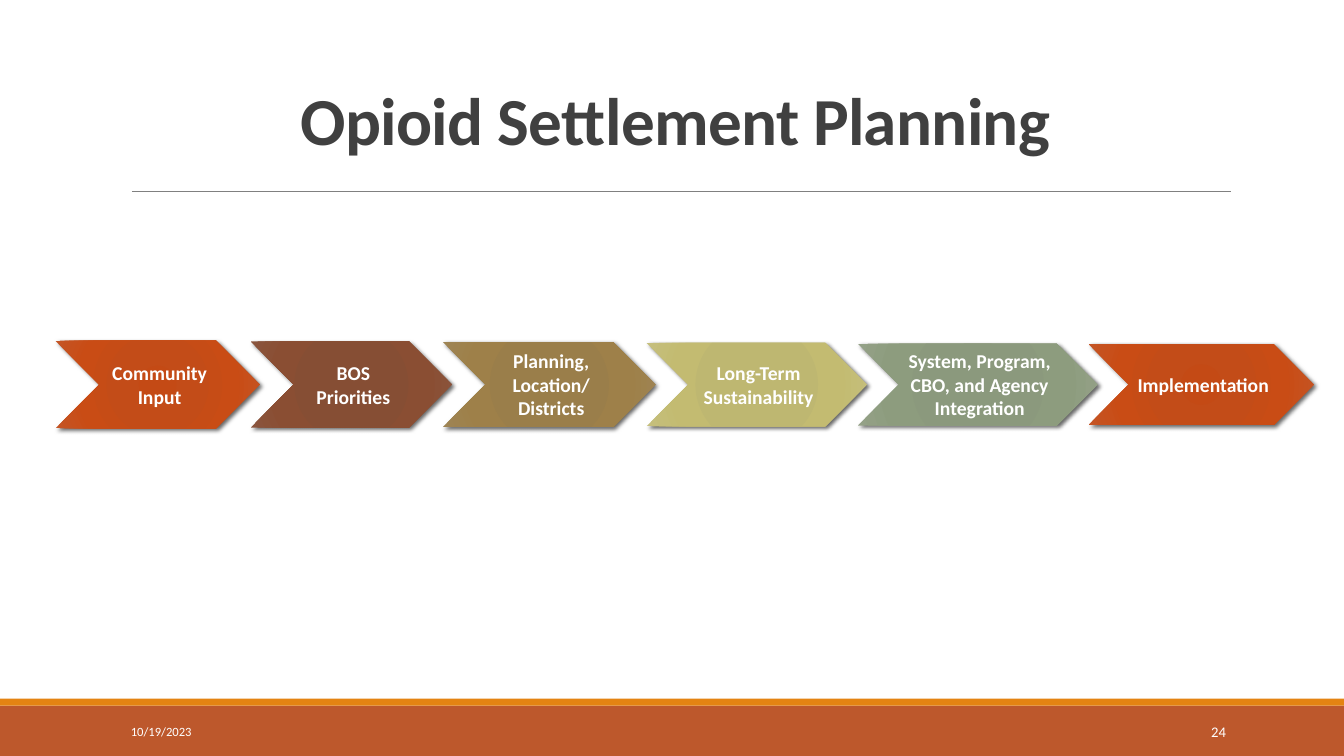
from lxml.etree import SubElement
from pptx import Presentation
from pptx.dml.color import RGBColor
from pptx.enum.shapes import MSO_CONNECTOR, MSO_SHAPE
from pptx.enum.text import MSO_ANCHOR, MSO_AUTO_SIZE, PP_ALIGN
from pptx.oxml import parse_xml
from pptx.oxml.ns import nsdecls, qn
from pptx.util import Pt

TITLE = "Opioid Settlement Planning"
DATE = "10/19/2023"
PAGE_NUMBER = "24"

ORANGE_STOPS = ("C44A15", "C34C18", "C94C15", "C45525")
BROWN_STOPS = ("874C32", "864E34", "8A4E33", "8A553D")
TAN_STOPS = ("9A7D48", "9A7E4A", "9E8049", "9E8454")
OLIVE_STOPS = ("BEB76E", "BEB771", "C3BB71", "C5BF7D")
SAGE_STOPS = ("8A987B", "8B997D", "8D9C7E", "94A187")
STOP_POSITIONS = (0, 34, 70, 100)

# text, width in points, gradient colours
STEPS = [
    ("Community Input", 146, ORANGE_STOPS),
    ("BOS Priorities", 144, BROWN_STOPS),
    ("Planning, Location/ Districts", 152, TAN_STOPS),
    ("Long-Term Sustainability", 157.5, OLIVE_STOPS),
    ("System, Program, CBO, and Agency Integration", 171.5, SAGE_STOPS),
    ("Implementation", 161, ORANGE_STOPS),
]
FIRST_LEFT, CENTER_Y, OVERLAP = 39.6, 274.7, 6.6
FIRST_HEIGHT, HEIGHT_STEP = 62.6, 1

PAGE_WIDTH, PAGE_HEIGHT = 960, 540
FONT = "Calibri"
WHITE = RGBColor(0xFF, 0xFF, 0xFF)
DARK_GRAY = RGBColor(0x40, 0x40, 0x40)
RULE_GRAY = RGBColor(0x80, 0x80, 0x80)
RUST = RGBColor(0xBD, 0x58, 0x2C)
AMBER = RGBColor(0xE4, 0x83, 0x12)


def style_text(shape, size, color, bold, align, anchor=MSO_ANCHOR.MIDDLE):
    frame = shape.text_frame
    frame.word_wrap = True
    frame.vertical_anchor = anchor
    para = frame.paragraphs[0]
    para.alignment = align
    for span in para.runs:
        span.font.name = FONT
        span.font.size = Pt(size)
        span.font.bold = bold
        span.font.color.rgb = color


def add_band(page, top, height, color):
    band = page.shapes.add_shape(
        MSO_SHAPE.RECTANGLE, 0, Pt(top), Pt(PAGE_WIDTH), Pt(height))
    band.shadow.inherit = False
    band.fill.solid()
    band.fill.fore_color.rgb = color
    band.line.fill.background()


def add_footer_text(page, text, left, width, size, align):
    box = page.shapes.add_textbox(Pt(left), Pt(508.3), Pt(width), Pt(28.8))
    box.text_frame.text = text
    style_text(box, size, WHITE, False, align)


def add_radial_fill_and_shadow(shape, colors):
    stops = "".join(
        f'<a:gs pos="{position * 1000}"><a:srgbClr val="{color}"/></a:gs>'
        for position, color in zip(STOP_POSITIONS, colors))
    gradient = parse_xml(
        f'<a:gradFill {nsdecls("a")} rotWithShape="1"><a:gsLst>{stops}</a:gsLst>'
        '<a:path path="circle"><a:fillToRect l="100000" t="100000" '
        'r="100000" b="100000"/></a:path></a:gradFill>')
    shadow = parse_xml(
        f'<a:effectLst {nsdecls("a")}><a:outerShdw blurRad="{Pt(3)}" '
        f'dist="{Pt(2)}" dir="2700000" algn="tl" rotWithShape="0">'
        '<a:srgbClr val="000000"><a:alpha val="60000"/></a:srgbClr>'
        '</a:outerShdw></a:effectLst>')
    shape.line.fill.background()
    properties = shape._element.spPr
    properties.find(qn("a:prstGeom")).addnext(gradient)
    properties.find(qn("a:ln")).addnext(shadow)


def add_step(page, text, left, width, height, colors):
    step = page.shapes.add_shape(
        MSO_SHAPE.CHEVRON, Pt(left), Pt(CENTER_Y - height / 2), Pt(width), Pt(height))
    add_radial_fill_and_shadow(step, colors)
    frame = step.text_frame
    frame.text = text
    frame.margin_left = Pt(4.2)
    frame.margin_top = frame.margin_right = frame.margin_bottom = Pt(1.4)
    style_text(step, 14, WHITE, True, PP_ALIGN.CENTER)


def add_title(page):
    title = page.shapes.title
    title.left, title.top, title.width, title.height = Pt(86.4), Pt(22.6), Pt(792), Pt(95)
    title.text_frame.text = TITLE
    title.text_frame.auto_size = MSO_AUTO_SIZE.NONE
    style_text(title, 48, DARK_GRAY, True, PP_ALIGN.CENTER, MSO_ANCHOR.BOTTOM)
    para = title.text_frame.paragraphs[0]
    para.line_spacing = 0.85
    para.runs[0]._r.get_or_add_rPr().set("spc", "-50")


def add_title_rule(page):
    rule = page.shapes.add_connector(
        MSO_CONNECTOR.STRAIGHT, Pt(94.3), Pt(136.6), Pt(879), Pt(136.6))
    rule.line.color.rgb = RULE_GRAY
    rule.line.width = Pt(0.5)
    SubElement(rule._element.spPr, qn("a:effectLst"))


def main():
    deck = Presentation()
    deck.slide_width, deck.slide_height = Pt(PAGE_WIDTH), Pt(PAGE_HEIGHT)
    page = deck.slides.add_slide(deck.slide_layouts[5])

    add_band(page, 504, 36, RUST)
    add_band(page, 499, 5, AMBER)
    add_title_rule(page)
    add_title(page)
    add_footer_text(page, DATE, 86.4, 194.4, 9, PP_ALIGN.LEFT)
    add_footer_text(page, PAGE_NUMBER, 779.8, 103, 10.5, PP_ALIGN.RIGHT)

    left = FIRST_LEFT
    for index, (text, width, colors) in enumerate(STEPS):
        add_step(page, text, left, width, FIRST_HEIGHT - index * HEIGHT_STEP, colors)
        left += width - OVERLAP

    deck.save("out.pptx")


if __name__ == "__main__":
    main()
